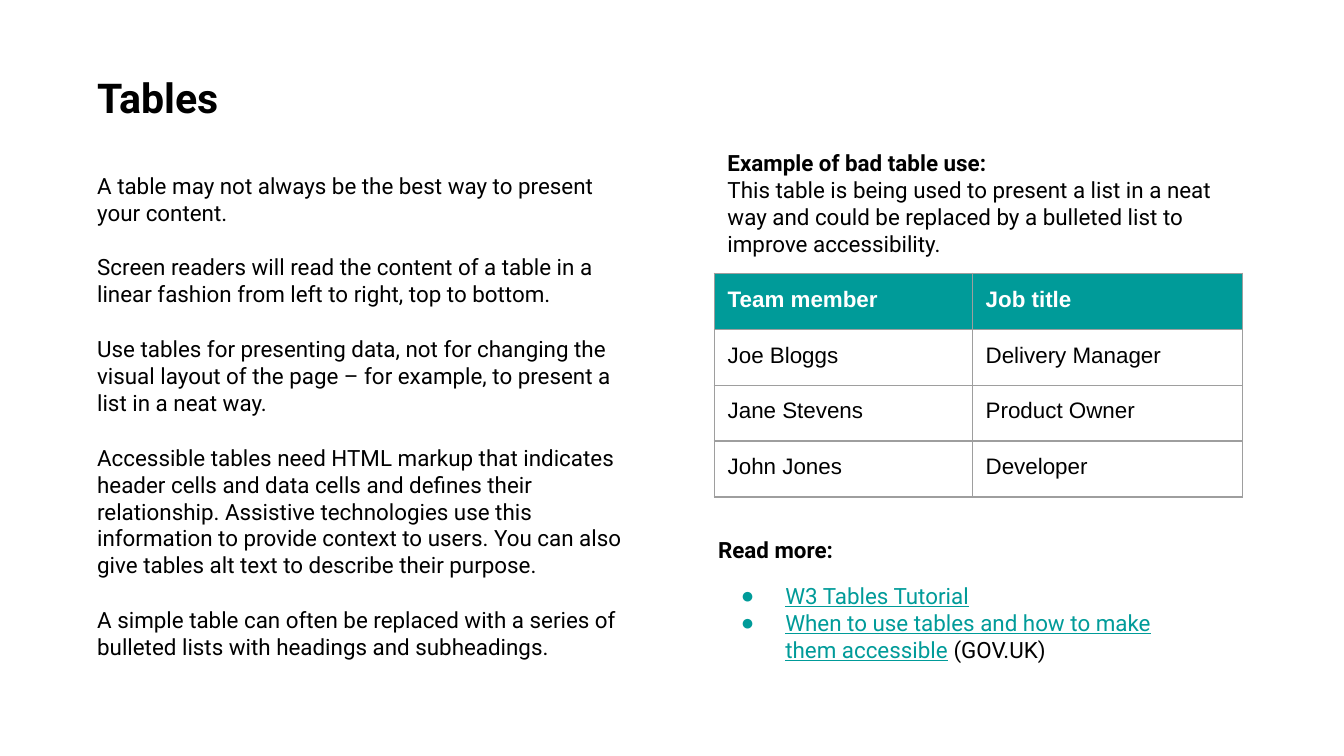
import pptx
import pptx.util
import pptx.dml.color
import pptx.enum.text
from dataclasses import dataclass
from lxml import etree

Inches, Pt = pptx.util.Inches, pptx.util.Pt
WIDE = 10
HIGH = WIDE * 9 / 16
PLAIN = "{2D5ABB26-0587-4C30-8999-92F81FD0307C}"  # table style: none, no grid


@dataclass(frozen=True)
class Theme:
    font: str = "Roboto"
    grid: str = "Arial"
    ink: str = "000000"
    teal: str = "009B99"
    white: str = "FFFFFF"
    rule: str = "9E9E9E"
    head: int = 22
    body: int = 12
    pad: float = 0.1


T = Theme()
LINK = {"color": T.teal, "line": True}

# A paragraph is (space before, bulleted, runs); a run is (text, style).
TITLE = [(0, False, [("Tables", {"bold": True, "size": T.head})])]
ADVICE = [
    "A table may not always be the best way to present your content.",
    "Screen readers will read the content of a table in a linear fashion "
    "from left to right, top to bottom.",
    "Use tables for presenting data, not for changing the visual layout of "
    "the page – for example, to present a list in a neat way.",
    "Accessible tables need HTML markup that indicates header cells and data "
    "cells and defines their relationship. Assistive technologies use this "
    "information to provide context to users. You can also give tables alt "
    "text to describe their purpose.",
    "A simple table can often be replaced with a series of bulleted lists "
    "with headings and subheadings.",
]
MORE = [
    (0, False, [("Read more:", {"bold": True})]),
    (10, True, [("W3 Tables Tutorial", LINK)]),
    (0, True, [("When to use tables and how to make them accessible", LINK),
               (" (GOV.UK)", {})]),
]
CASE = [
    (0, False, [("Example of bad table use:", {"bold": True})]),
    (0, False, [("This table is being used to present a list in a neat way "
                 "and could be replaced by a bulleted list to improve "
                 "accessibility.", {})]),
]
TEAM = [
    ("Team member", "Job title"),
    ("Joe Bloggs", "Delivery Manager"),
    ("Jane Stevens", "Product Owner"),
    ("John Jones", "Developer"),
]

# Left, top, width and height in percent of the slide.
PLACES = {
    "title": (6.23, 7.8, 87.4, 11.2),
    "advice": (6.23, 20.95, 41.9, 59.2),
    "more": (52.43, 69.2, 38.1, 20.8),
    "team": (53.14, 36.15, 39.3, 29.6),
    "case": (53.14, 17.95, 40.5, 18),
}
COLS = (19.2, 20.1)


def rgb(code):
    return pptx.dml.color.RGBColor.from_string(code)


def place(name):
    return [Inches(part * side / 100)
            for part, side in zip(PLACES[name], (WIDE, HIGH) * 2)]


def add(parent, tag, **attrs):
    return etree.SubElement(parent, pptx.oxml.ns.qn(tag), attrs)


def mark(para, bullet):
    """Set the indent and the bullet, or turn the inherited bullet off."""
    props = para._p.get_or_add_pPr()
    left, hang = (0.5, -0.33) if bullet else (0, 0)
    props.set("marL", str(Inches(left)))
    props.set("indent", str(Inches(hang)))
    if bullet:
        add(add(props, "a:buClr"), "a:srgbClr", val=T.teal)
        add(props, "a:buChar", char="●")
    else:
        add(props, "a:buNone")


def write(para, text, color=T.ink, bold=False, line=False,
          size=T.body, face=T.font):
    run = para.add_run()
    run.text = text
    font = run.font
    font.name, font.size, font.bold = face, Pt(size), bold
    font.underline = line
    font.color.rgb = rgb(color)


def inset(box):
    box.margin_left = box.margin_right = Inches(T.pad)
    box.margin_top = box.margin_bottom = Inches(T.pad)


def fill(shape, paras):
    frame = shape.text_frame
    frame.word_wrap = True
    frame.auto_size = pptx.enum.text.MSO_AUTO_SIZE.NONE
    frame.vertical_anchor = pptx.enum.text.MSO_ANCHOR.TOP
    inset(frame)
    for i, (gap, bullet, runs) in enumerate(paras):
        para = frame.add_paragraph() if i else frame.paragraphs[0]
        mark(para, bullet)
        para.alignment = pptx.enum.text.PP_ALIGN.LEFT
        para.space_before = Pt(gap)
        for text, style in runs:
            write(para, text, **style)


def edge(cell):
    props = cell._tc.get_or_add_tcPr()
    for i, side in enumerate(("lnL", "lnR", "lnT", "lnB")):
        line = etree.Element(pptx.oxml.ns.qn("a:" + side), w=str(Pt(0.75)))
        add(add(line, "a:solidFill"), "a:srgbClr", val=T.rule)
        props.insert(i, line)


def draw_team(slide):
    grid = slide.shapes.add_table(len(TEAM), len(COLS), *place("team")).table
    grid._tbl.tblPr.find(pptx.oxml.ns.qn("a:tableStyleId")).text = PLAIN
    grid.horz_banding = False
    for col, share in zip(grid.columns, COLS):
        col.width = Inches(share * WIDE / 100)
    for r, row in enumerate(TEAM):
        for c, text in enumerate(row):
            cell = grid.cell(r, c)
            inset(cell)
            if r == 0:
                cell.fill.solid()
                cell.fill.fore_color.rgb = rgb(T.teal)
            else:
                cell.fill.background()
            edge(cell)
            write(cell.text_frame.paragraphs[0], text, face=T.grid,
                  bold=r == 0, color=T.ink if r else T.white)


def main():
    deck = pptx.Presentation()
    deck.slide_width, deck.slide_height = Inches(WIDE), Inches(HIGH)
    slide = deck.slides.add_slide(deck.slide_layouts.get_by_name("Two Content"))
    advice = [(15 if i else 0, False, [(text, {})])
              for i, text in enumerate(ADVICE)]
    texts = (("title", TITLE), ("advice", advice), ("more", MORE))
    for shape, (name, paras) in zip(slide.placeholders, texts):
        shape.left, shape.top, shape.width, shape.height = place(name)
        fill(shape, paras)
    draw_team(slide)
    fill(slide.shapes.add_textbox(*place("case")), CASE)
    deck.save("out.pptx")


if __name__ == "__main__":
    main()
